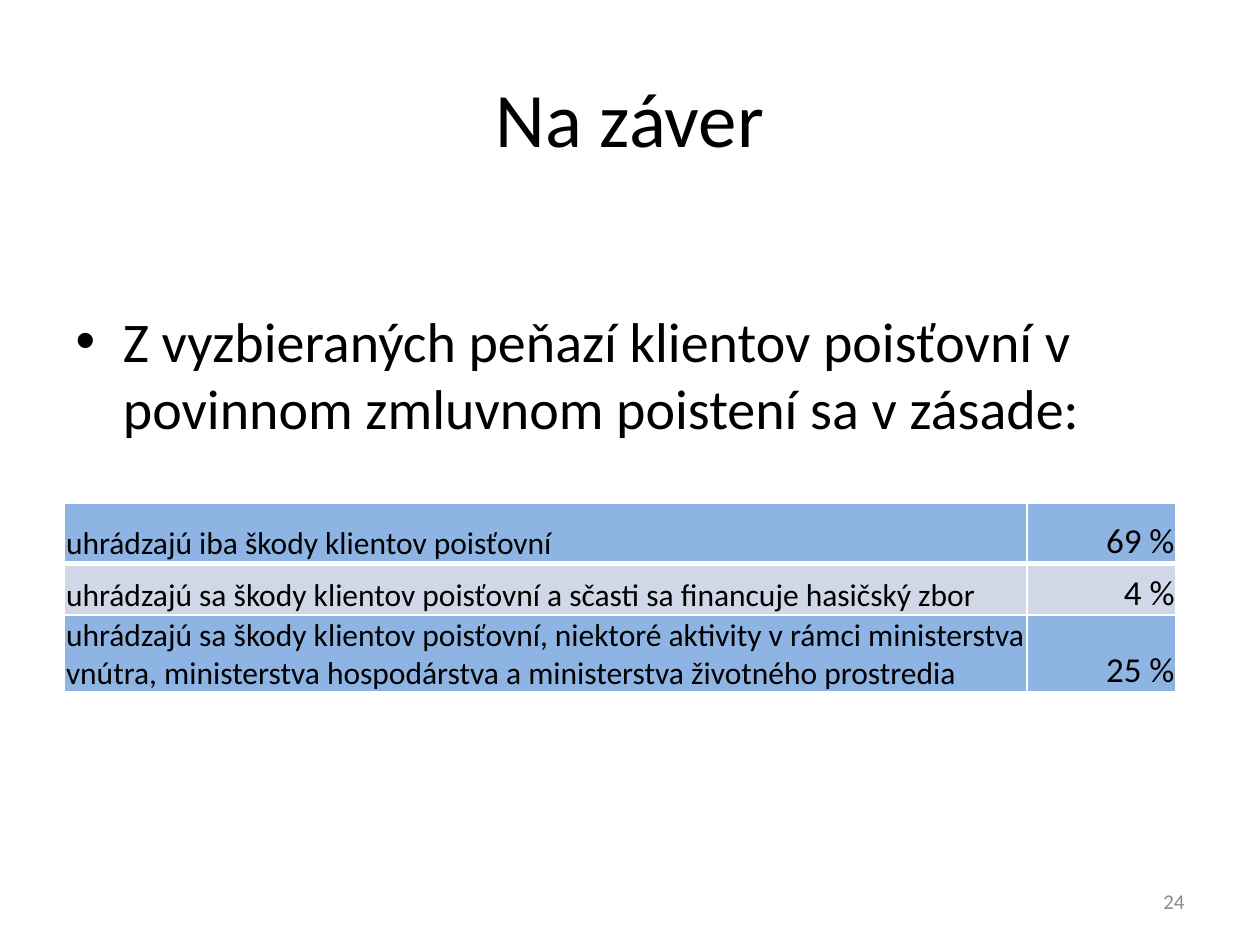
from lxml.etree import SubElement as Sub
from pptx import Presentation
from pptx.dml.color import RGBColor as Rgb
from pptx.enum.text import MSO_ANCHOR as Anchor, PP_ALIGN as Align
from pptx.oxml.ns import qn
from pptx.util import Pt

COLORS = {"text": "000000", "blue": "8EB4E3", "pale": "D0D8E8",
          "line": "FFFFFF", "number": "8C8C8C"}
ROWS = [
    ("uhrádzajú iba škody klientov poisťovní", "69 %"),
    ("uhrádzajú sa škody klientov poisťovní a sčasti sa financuje hasičský zbor", "4 %"),
    ("uhrádzajú sa škody klientov poisťovní, niektoré aktivity v rámci ministerstva "
     "vnútra, ministerstva hospodárstva a ministerstva životného prostredia", "25 %"),
]
WIDTHS = (550, 85)
HEIGHTS = (34.6, 29.5, 44)


def write(frame, text, size, color="text", align=Align.LEFT, anchor=Anchor.TOP):
    frame.word_wrap = True
    frame.vertical_anchor = anchor
    para = frame.paragraphs[0]
    para.alignment = align
    run = para.add_run()
    run.text = text
    font = run.font
    font.name = "Calibri"
    font.size = Pt(size)
    font.bold = False
    font.color.rgb = Rgb.from_string(COLORS[color])


def place(shape, left, top, width, height):
    shape.left, shape.top = Pt(left), Pt(top)
    shape.width, shape.height = Pt(width), Pt(height)


def add_title(slide):
    title = slide.shapes.title
    place(title, 36, 21.6, 648, 90)
    write(title.text_frame, "Na záver", 44, align=Align.CENTER, anchor=Anchor.MIDDLE)


def add_body(slide):
    body = slide.placeholders[1]
    place(body, 36, 126, 648, 356.4)
    body.text_frame.margin_top = Pt(49)
    write(body.text_frame,
          "Z vyzbieraných peňazí klientov poisťovní v povinnom zmluvnom poistení sa v zásade:", 32)


def add_number(slide):
    box = slide.shapes.add_textbox(Pt(516), Pt(500.4), Pt(168), Pt(28.8))
    write(box.text_frame, "24", 12, "number", Align.RIGHT, Anchor.MIDDLE)


def set_lines(cell, base):
    props = cell._tc.get_or_add_tcPr()
    for side, width in (("L", 1), ("R", 1), ("T", 1), ("B", base)):
        line = Sub(props, qn(f"a:ln{side}"), w=str(Pt(width)))
        Sub(Sub(line, qn("a:solidFill")), qn("a:srgbClr"), val=COLORS["line"])


def fill_cell(cell, text, size, align, color, base):
    cell.margin_left = cell.margin_right = cell.margin_top = Pt(0.75)
    cell.margin_bottom = Pt(0)
    write(cell.text_frame, text, size, align=align)
    cell.vertical_anchor = Anchor.BOTTOM
    set_lines(cell, base)
    cell.fill.solid()
    cell.fill.fore_color.rgb = Rgb.from_string(COLORS[color])


def add_grid(slide):
    table = slide.shapes.add_table(len(ROWS), len(WIDTHS), Pt(37), Pt(287.3),
                                   Pt(sum(WIDTHS)), Pt(sum(HEIGHTS))).table
    table.first_row = table.horz_banding = False
    for col, width in zip(table.columns, WIDTHS):
        col.width = Pt(width)
    for i, (label, share) in enumerate(ROWS):
        table.rows[i].height = Pt(HEIGHTS[i])
        color = "pale" if i % 2 else "blue"
        base = 1 if i else 3
        fill_cell(table.cell(i, 0), label, 18, Align.LEFT, color, base)
        fill_cell(table.cell(i, 1), share, 20, Align.RIGHT, color, base)


def main():
    deck = Presentation()
    deck.slide_width, deck.slide_height = Pt(720), Pt(540)
    slide = deck.slides.add_slide(deck.slide_layouts[1])
    add_title(slide)
    add_body(slide)
    add_number(slide)
    add_grid(slide)
    deck.save("out.pptx")


if __name__ == "__main__":
    main()
